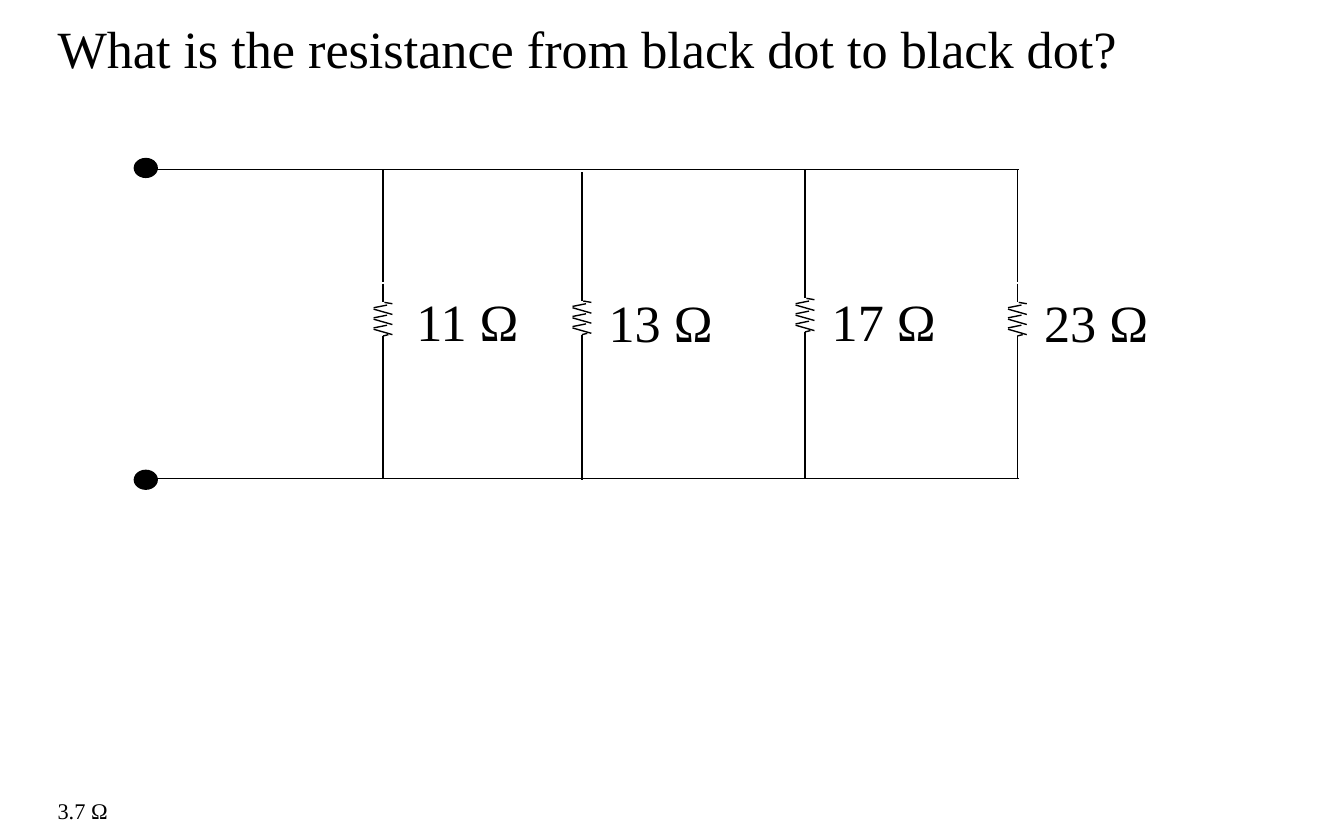
"""Draw a parallel resistor circuit question on one slide."""
import dataclasses
import typing

import lxml.etree
import pptx
import pptx.dml.color
import pptx.enum.shapes
import pptx.enum.text
import pptx.oxml.ns
import pptx.util

Inches = pptx.util.Inches
BLACK = "000000"
FONT = "Times New Roman"
TOP, BASE = 1.26, 3.56
Point = tuple[float, float]


@dataclasses.dataclass(frozen=True)
class Branch:
    label: str
    x: float
    coil: float
    upper: Point
    lower: Point
    text: Point
    width: float = 0.99


BRANCHES = [
    Branch("11 Ω", 2.85, 2.11, (TOP, 2.1), (2.58, BASE), (3, 2.1), 0.98),
    Branch("13 Ω", 4.33, 2.1, (1.28, 2.11), (2.6, 3.57), (4.43, 2.11)),
    Branch("17 Ω", 5.99, 2.08, (TOP, 2.1), (2.58, BASE), (6.09, 2.1)),
    Branch("23 Ω", 7.57, 2.11, (TOP, 2.1), (2.58, BASE), (7.67, 2.11)),
]


def color(code: str) -> pptx.dml.color.RGBColor:
    return pptx.dml.color.RGBColor.from_string(code)


def wire(shapes: typing.Any, start: Point, end: Point) -> None:
    kind = pptx.enum.shapes.MSO_CONNECTOR.STRAIGHT
    line = shapes.add_connector(kind, *map(Inches, start + end))
    line.line.color.rgb = color(BLACK)
    line.line.width = pptx.util.Pt(0.75)
    lxml.etree.SubElement(line._element.spPr, pptx.oxml.ns.qn("a:effectLst"))


def write(shapes: typing.Any, text: str, *, left: float, top: float,
          width: float, height: float = 0.57, size: float = 28,
          wrap: bool = False) -> None:
    box = shapes.add_textbox(*map(Inches, (left, top, width, height)))
    frame = box.text_frame
    frame.word_wrap = wrap
    frame.auto_size = pptx.enum.text.MSO_AUTO_SIZE.SHAPE_TO_FIT_TEXT
    run = frame.paragraphs[0].add_run()
    run.text = text
    run.font.name = FONT
    run.font.size = pptx.util.Pt(size)
    run.font.color.rgb = color(BLACK)


def dot(shapes: typing.Any, top: float) -> None:
    kind = pptx.enum.shapes.MSO_SHAPE.OVAL
    disc = shapes.add_shape(kind, *map(Inches, (1, top, 0.17, 0.14)))
    disc.shadow.inherit = False
    disc.fill.solid()
    disc.fill.fore_color.rgb = color(BLACK)
    disc.line.color.rgb = color(BLACK)
    disc.line.width = pptx.util.Pt(0.75)


def coil(shapes: typing.Any, x: float, top: float) -> None:
    group = shapes.add_group_shape().shapes
    parts = [
        ((0, 0), (0, 0.14)),
        ((0.01, 0.14), (0.07, 0.15)),
        ((0.04, 0.38), (0, 0.39)),
        ((0, 0.39), (0, 0.53)),
    ]
    for turn in range(3):
        drop = 0.16 + 0.075 * turn
        parts.append(((0.03, drop), (-0.07, drop + 0.02)))
        parts.append(((-0.07, drop + 0.03), (0.07, drop + 0.07)))
    for (ax, ay), (bx, by) in parts:
        wire(group, (x + ax, top + ay), (x + bx, top + by))


def branch(shapes: typing.Any, item: Branch) -> None:
    for start, end in (item.upper, item.lower):
        wire(shapes, (item.x, start), (item.x, end))
    coil(shapes, item.x, item.coil)
    left, top = item.text
    write(shapes, item.label, left=left, top=top, width=item.width)


def main() -> None:
    deck = pptx.Presentation()
    deck.slide_width, deck.slide_height = Inches(10), Inches(6.25)
    shapes = deck.slides.add_slide(deck.slide_layouts[6]).shapes
    write(shapes, "What is the resistance from black dot to black dot?",
          left=0.33, top=0.07, width=9.33, wrap=True)
    write(shapes, "3.7 Ω", left=0.33, top=5.88, width=0.58, height=0.3, size=12)
    for rail in (TOP, BASE):
        wire(shapes, (1.08, rail), (7.58, rail))
    for item in BRANCHES:
        branch(shapes, item)
    for top in (1.18, 3.5):
        dot(shapes, top)
    deck.save("out.pptx")


if __name__ == "__main__":
    main()
